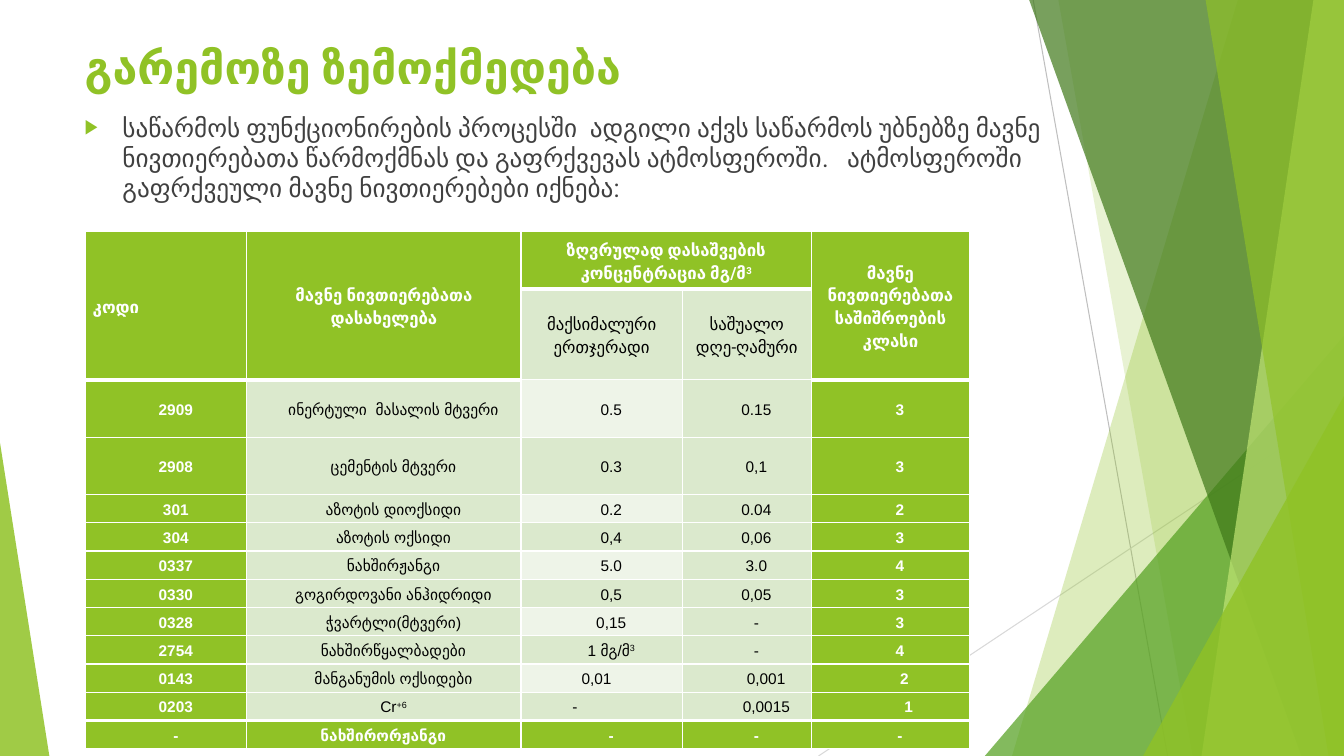
"""Builds a slide on the environmental impact of a plant, with a table of emitted substances."""
import dataclasses
import typing

import lxml.etree
import pptx
import pptx.dml.color
import pptx.enum.shapes
import pptx.enum.text
import pptx.oxml.ns
import pptx.util

ALIGN = pptx.enum.text.PP_ALIGN
COLUMNS, ROWS = 160, 90
SLIDE_WIDTH, SLIDE_HEIGHT = pptx.util.Inches(13.33), pptx.util.Inches(7.5)
GREEN, WHITE, BLACK, PALE, PALEST = "90C226", "FFFFFF", "000000", "DBE9CD", "EEF4E8"
BASE_INDENT = 2.28


class Band(typing.NamedTuple):
    top_left: float
    bottom_left: float
    color: str
    opacity: int


class Triangle(typing.NamedTuple):
    left: float
    top: float
    width: float
    apex: float
    color: str
    opacity: int


class Ray(typing.NamedTuple):
    start: tuple[float, float]
    end: tuple[float, float]
    color: str


@dataclasses.dataclass(frozen=True)
class Entry:
    text: str
    superscript: str = ""
    indent: float = BASE_INDENT
    align: ALIGN = ALIGN.CENTER


@dataclasses.dataclass(frozen=True)
class Look:
    font: str
    size: float
    color: str
    bold: bool = False


DECORATIONS = [
    Ray((123, 0), (139, 90), "BFBFBF"),
    Ray((160, 48.36), (97.44, 90), "D9D9D9"),
    Band(147.36, 120.48, GREEN, 30),
    Band(126, 141.96, GREEN, 20),
    Triangle(117.24, 39.96, 42.76, 1, "54A021", 72),
    Band(122.52, 154.92, "3F7819", 70),
    Band(156.36, 143.04, "C0E474", 70),
    Band(143.52, 158.16, GREEN, 65),
    Triangle(136.08, 47.16, 23.92, 1, GREEN, 80),
    Triangle(0, 52.68, 5.88, 0, GREEN, 85),
]
TITLE = "გარემოზე ზემოქმედება"
BODY = ("საწარმოს ფუნქციონირების პროცესში  ადგილი აქვს საწარმოს უბნებზე მავნე ნივთიერებათა "
        "წარმოქმნას და გაფრქვევას ატმოსფეროში.   ატმოსფეროში გაფრქვეული მავნე ნივთიერებები იქნება:")
HEADERS = {
    (0, 0): Entry("კოდი", indent=0, align=ALIGN.JUSTIFY),
    (0, 1): Entry("მავნე ნივთიერებათა დასახელება", indent=0),
    (0, 2): Entry("ზღვრულად დასაშვების კონცენტრაცია მგ/მ", "3", 0),
    (0, 4): Entry("მავნე ნივთიერებათა საშიშროების კლასი", indent=0),
    (1, 2): Entry("მაქსიმალური ერთჯერადი", indent=0),
    (1, 3): Entry("საშუალო დღე-ღამური", indent=0),
}
MERGES = [((0, 0), (1, 0)), ((0, 1), (1, 1)), ((0, 2), (0, 3)), ((0, 4), (1, 4))]
SUBSTANCES: list[tuple[str | Entry, ...]] = [
    ("2909", "ინერტული  მასალის მტვერი", "0.5", "0.15", "3"),
    ("2908", "ცემენტის მტვერი", "0.3", "0,1", "3"),
    ("301", "აზოტის დიოქსიდი", "0.2", "0.04", "2"),
    ("304", "აზოტის ოქსიდი", "0,4", "0,06", "3"),
    ("0337", "ნახშირჟანგი", "5.0", "3.0", "4"),
    ("0330", "გოგირდოვანი ანჰიდრიდი", "0,5", "0,05", "3"),
    ("0328", "ჭვარტლი(მტვერი)", "0,15", "-", "3"),
    ("2754", "ნახშირწყალბადები", Entry("1 მგ/მ", "3"), "-", "4"),
    ("0143", "მანგანუმის ოქსიდები", Entry("0,01", indent=6.36, align=ALIGN.LEFT),
     Entry("0,001", indent=6.84, align=ALIGN.LEFT), Entry("2", indent=3.36)),
    ("0203", Entry("Cr", "+6"), Entry("-", indent=5.28, align=ALIGN.LEFT),
     Entry("0,0015", indent=6.36, align=ALIGN.LEFT), Entry("1", indent=4.32)),
    ("-", Entry("ნახშირორჟანგი", indent=7.92, align=ALIGN.JUSTIFY), "-", "-", "-"),
]
COLUMN_WIDTHS = [19.2, 32.64, 19.2, 15.36, 18.84]
ROW_HEIGHTS = [6.84, 10.44, 6.84, 6.84] + [3.36] * 9
LAST_ROW = len(ROW_HEIGHTS) - 1


def across(columns: float) -> int:
    """Length of a number of grid columns."""
    return round(SLIDE_WIDTH * columns / COLUMNS)


def down(rows: float) -> int:
    """Length of a number of grid rows."""
    return round(SLIDE_HEIGHT * rows / ROWS)


def rgb(color: str) -> pptx.dml.color.RGBColor:
    """Colour from a hex string."""
    return pptx.dml.color.RGBColor.from_string(color)


def add_element(parent, tag: str, **attributes: str):
    """Append a drawing element to a parent."""
    return lxml.etree.SubElement(parent, pptx.oxml.ns.qn(tag), attributes)


def paint(shape, color: str, opacity: int) -> None:
    """Give a shape a translucent fill without line or shadow."""
    shape.shadow.inherit = False
    shape.line.fill.background()
    shape.fill.solid()
    shape.fill.fore_color.rgb = rgb(color)
    color_element = shape.fill._xPr.find(".//" + pptx.oxml.ns.qn("a:srgbClr"))
    add_element(color_element, "a:alpha", val=str(opacity * 1000))


def draw_decoration(slide, item: Ray | Band | Triangle) -> None:
    """Draw one ray, band or triangle of the background."""
    if isinstance(item, Ray):
        connector = slide.shapes.add_connector(
            pptx.enum.shapes.MSO_CONNECTOR.STRAIGHT, across(item.start[0]), down(item.start[1]),
            across(item.end[0]), down(item.end[1]))
        connector.line.color.rgb = rgb(item.color)
        connector.line.width = pptx.util.Pt(0.75)
        add_element(connector._element.spPr, "a:effectLst")
        return
    if isinstance(item, Band):
        builder = slide.shapes.build_freeform(across(item.top_left), 0, scale=1.0)
        builder.add_line_segments([(across(COLUMNS), 0), (across(COLUMNS), down(ROWS)),
                                   (across(item.bottom_left), down(ROWS))], close=True)
        shape = builder.convert_to_shape()
    else:
        shape = slide.shapes.add_shape(
            pptx.enum.shapes.MSO_SHAPE.ISOSCELES_TRIANGLE, across(item.left), down(item.top),
            across(item.width), down(ROWS - item.top))
        shape.adjustments[0] = item.apex
    paint(shape, item.color, item.opacity)


def add_run(paragraph, text: str, look: Look, raised: bool = False) -> None:
    """Add one formatted run."""
    run = paragraph.add_run()
    run.text = text
    run.font.name, run.font.size, run.font.bold = look.font, pptx.util.Pt(look.size), look.bold
    run.font.color.rgb = rgb(look.color)
    if raised:
        run._r.get_or_add_rPr().set("baseline", "30000")


def fill_placeholder(shape, left: float, top: float, width: float, height: float, text: str, look: Look):
    """Move a placeholder to the front, write its text and return the paragraph."""
    shape.left, shape.top, shape.width, shape.height = across(left), down(top), across(width), down(height)
    shape._element.getparent().append(shape._element)
    frame = shape.text_frame
    frame.word_wrap, frame.auto_size = True, pptx.enum.text.MSO_AUTO_SIZE.NONE
    frame.vertical_anchor = pptx.enum.text.MSO_ANCHOR.TOP
    paragraph = frame.paragraphs[0]
    paragraph.alignment = ALIGN.LEFT
    add_run(paragraph, text, look)
    return paragraph


def add_bullet(paragraph) -> None:
    """Give a paragraph a hanging green arrow bullet."""
    paragraph.space_before = pptx.util.Pt(10)
    properties = paragraph._p.get_or_add_pPr()
    properties.set("marL", str(across(4.5)))
    properties.set("indent", str(-across(4.5)))
    add_element(add_element(properties, "a:buClr"), "a:srgbClr", val=GREEN)
    add_element(properties, "a:buSzPct", val="80000")
    add_element(properties, "a:buChar", char="▶")


def bottom_width(row: int, column: int) -> int:
    """Width in points of the border below a cell."""
    heavy = row in (0, LAST_ROW - 1) or (row == 1 and column in (0, 1, 4))
    return 3 if heavy else 1


def style_cell(cell, row: int, column: int, fill: str) -> None:
    """Set fill, margins, anchor and borders of a cell."""
    cell.fill.solid()
    cell.fill.fore_color.rgb = rgb(fill)
    cell.margin_left = cell.margin_right = across(0.84)
    cell.margin_top = cell.margin_bottom = 0
    cell.vertical_anchor = pptx.enum.text.MSO_ANCHOR.MIDDLE
    properties = cell._tc.get_or_add_tcPr()
    top = bottom_width(row - 1, column) if row else 1
    widths = {"a:lnL": 1, "a:lnR": 1, "a:lnT": top, "a:lnB": bottom_width(row, column)}
    for position, (tag, width) in enumerate(widths.items()):
        border = add_element(properties, tag, w=str(pptx.util.Pt(width)))
        add_element(add_element(border, "a:solidFill"), "a:srgbClr", val=WHITE)
        properties.insert(position, border)


def write_entry(cell, entry: Entry, look: Look) -> None:
    """Write an entry and its superscript into a cell."""
    paragraph = cell.text_frame.paragraphs[0]
    paragraph.alignment, paragraph.line_spacing = entry.align, 1.15
    paragraph._p.get_or_add_pPr().set("marL", str(across(entry.indent)))
    add_run(paragraph, entry.text, look)
    if entry.superscript:
        add_run(paragraph, entry.superscript, look, raised=True)


def draw_table(slide) -> None:
    """Draw the table of substances."""
    table = slide.shapes.add_table(len(ROW_HEIGHTS), len(COLUMN_WIDTHS), across(10.2), down(27.6),
                                   across(sum(COLUMN_WIDTHS)), down(sum(ROW_HEIGHTS))).table
    table.first_row = table.horz_banding = False
    for column, width in enumerate(COLUMN_WIDTHS):
        table.columns[column].width = across(width)
    entries = dict(HEADERS)
    for row, substance in enumerate(SUBSTANCES, start=2):
        for column, value in enumerate(substance):
            entries[row, column] = value if isinstance(value, Entry) else Entry(value)
    for row, height in enumerate(ROW_HEIGHTS):
        table.rows[row].height = down(height)
        for column in range(len(COLUMN_WIDTHS)):
            inner = 0 < row < LAST_ROW and column in ((2, 3) if row == 1 else (1, 2, 3))
            pale = PALEST if column == 2 and row > 1 and row % 2 == 0 else PALE
            cell = table.cell(row, column)
            style_cell(cell, row, column, pale if inner else GREEN)
            if (row, column) in entries:
                font, size = ("Roboto", 12) if row < 2 else ("Arial", 11)
                write_entry(cell, entries[row, column], Look(font, size, BLACK if inner else WHITE, not inner))
    for first, last in MERGES:
        table.cell(*first).merge(table.cell(*last))


def main() -> None:
    """Build and save the presentation."""
    presentation = pptx.Presentation()
    presentation.slide_width, presentation.slide_height = SLIDE_WIDTH, SLIDE_HEIGHT
    slide = presentation.slides.add_slide(presentation.slide_layouts[1])
    for item in DECORATIONS:
        draw_decoration(slide, item)
    fill_placeholder(slide.shapes.title, 8.88, 4.08, 112.8, 17.28, TITLE, Look("Roboto", 32, GREEN, True))
    add_bullet(fill_placeholder(slide.placeholders[1], 8.88, 12.72, 120.24, 67.44, BODY,
                                Look("Roboto", 18, "404040")))
    draw_table(slide)
    presentation.save("out.pptx")


if __name__ == "__main__":
    main()
